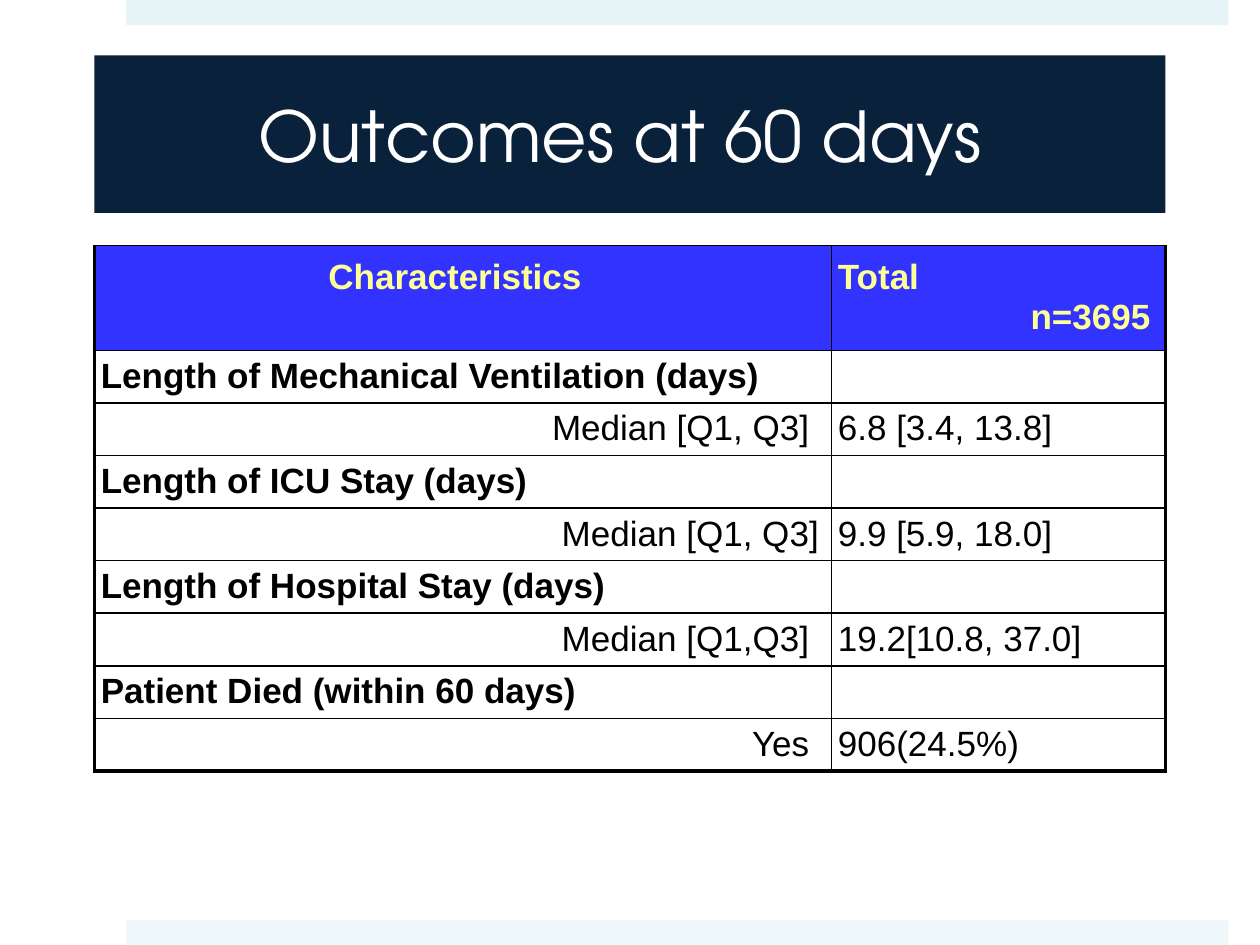
from lxml.etree import SubElement
from pptx import Presentation
from pptx.dml.color import RGBColor
from pptx.enum.shapes import MSO_SHAPE as Shape
from pptx.enum.text import MSO_ANCHOR as Anchor, PP_ALIGN as Align
from pptx.oxml.ns import qn
from pptx.util import Inches, Pt

COLORS = {
    "top_band": "E6F4F8", "bottom_band": "EEF8FB", "title_bar": "09213B",
    "header": "3333FF", "header_text": "FFFF99",
    "white": "FFFFFF", "black": "000000",
}
TITLE = "Outcomes at 60 days"
HEADER = ("Characteristics ", ("Total", "n=3695"))
OUTCOMES = [
    ("Length of Mechanical Ventilation (days)", "Median [Q1, Q3] ", "6.8 [3.4, 13.8]"),
    ("Length of ICU Stay (days)", "Median [Q1, Q3]", "9.9 [5.9, 18.0]"),
    ("Length of Hospital Stay (days)", "Median [Q1,Q3] ", "19.2[10.8, 37.0]"),
    ("Patient Died (within 60 days)", "Yes ", "906(24.5%)"),
]
COLUMN_WIDTHS = (5.85, 2.65)
TABLE_HEIGHT, HEADER_HEIGHT = 4.17, 0.83
THIN, THICK = 1, 2.25


def color(name):
    return RGBColor.from_string(COLORS[name])


def add_bar(slide, left, top, width, height, fill):
    bar = slide.shapes.add_shape(
        Shape.RECTANGLE, Inches(left), Inches(top), Inches(width), Inches(height))
    bar.shadow.inherit = False
    bar.fill.solid()
    bar.fill.fore_color.rgb = color(fill)
    bar.line.fill.background()
    return bar


def set_margins(target, left, top, right, bottom):
    target.margin_left, target.margin_top = Inches(left), Inches(top)
    target.margin_right, target.margin_bottom = Inches(right), Inches(bottom)


def format_para(para, align, size, font, fill, bold=False):
    para.alignment = align
    for span in para.runs:
        span.font.size = Pt(size)
        span.font.name = font
        span.font.bold = bold
        span.font.color.rgb = color(fill)


def set_borders(cell, widths):
    properties = cell._tc.get_or_add_tcPr()
    for side, width in zip("LRTB", widths):
        line = SubElement(properties, qn(f"a:ln{side}"), w=str(Pt(width)))
        fill = SubElement(line, qn("a:solidFill"))
        SubElement(fill, qn("a:srgbClr"), val=COLORS["black"])


def style_cell(cell, row, column, last_row):
    set_borders(cell, (
        THIN if column else THICK,
        THICK if column else THIN,
        THIN,
        THICK if row == last_row else THIN,
    ))
    cell.fill.solid()
    cell.fill.fore_color.rgb = color("white" if row else "header")
    right = 0.1 if column == 0 else 0 if row else 0.12
    set_margins(cell, 0.05, 0.05 if row else 0.1, right, 0)


def write_cell(cell, lines, aligns, fill="black", bold=False):
    cell.text_frame.text = "\n".join(lines)
    for para, align in zip(cell.text_frame.paragraphs, aligns):
        format_para(para, align, 20, "Arial", fill, bold)


def add_outcome_table(slide):
    row_count = 1 + 2 * len(OUTCOMES)
    table = slide.shapes.add_table(
        row_count, 2, Inches(0.75), Inches(1.95),
        Inches(sum(COLUMN_WIDTHS)), Inches(TABLE_HEIGHT)).table
    table.first_row = table.horz_banding = False
    for column, width in zip(table.columns, COLUMN_WIDTHS):
        column.width = Inches(width)
    body_height = (TABLE_HEIGHT - HEADER_HEIGHT) / (row_count - 1)
    for index, row in enumerate(table.rows):
        row.height = Inches(body_height if index else HEADER_HEIGHT)
        for column, cell in enumerate(row.cells):
            style_cell(cell, index, column, row_count - 1)

    write_cell(table.cell(0, 0), [HEADER[0]], [Align.CENTER], "header_text", True)
    write_cell(table.cell(0, 1), HEADER[1], [Align.LEFT, Align.RIGHT], "header_text", True)
    for index, (heading, measure, value) in enumerate(OUTCOMES):
        row = 1 + 2 * index
        write_cell(table.cell(row, 0), [heading], [Align.LEFT], bold=True)
        write_cell(table.cell(row + 1, 0), [measure], [Align.RIGHT])
        write_cell(table.cell(row + 1, 1), [value], [Align.LEFT])


def main():
    deck = Presentation()
    deck.slide_width, deck.slide_height = Inches(10), Inches(7.5)
    slide = deck.slides.add_slide(deck.slide_layouts[6])
    add_bar(slide, 1, 0, 8.75, 0.2, "top_band")
    add_bar(slide, 1, 7.3, 8.75, 0.2, "bottom_band")

    title = add_bar(slide, 0.75, 0.44, 8.5, 1.25, "title_bar").text_frame
    title.word_wrap = True
    title.vertical_anchor = Anchor.MIDDLE
    set_margins(title, 1.3, 0.05, 0.3, 0.05)
    title.text = TITLE
    format_para(title.paragraphs[0], Align.LEFT, 40, "TeX Gyre Adventor", "white")

    add_outcome_table(slide)
    deck.save("out.pptx")


if __name__ == "__main__":
    main()
